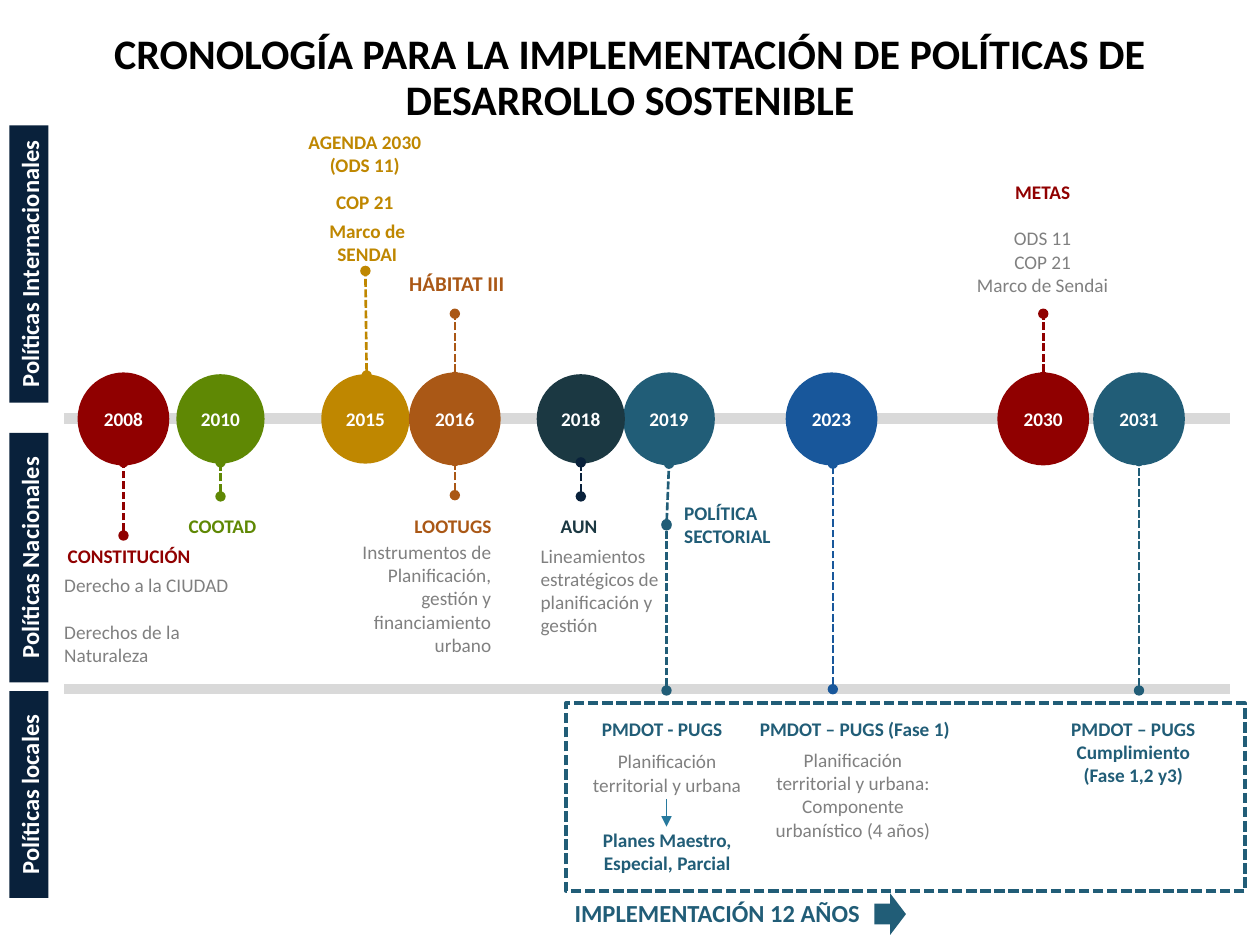
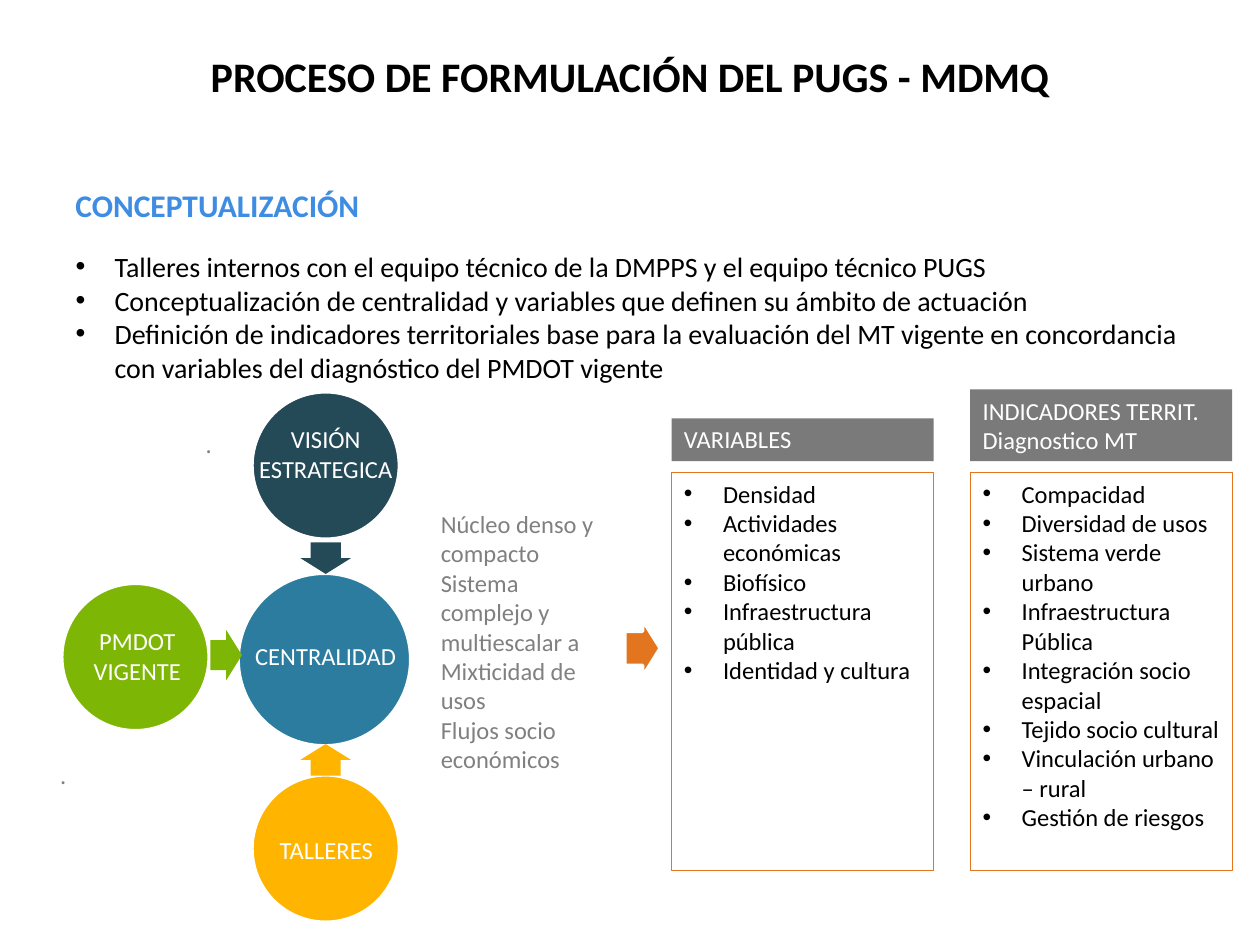
from lxml import etree
from pptx import Presentation
from pptx import util as u
from pptx.dml.color import RGBColor
from pptx.enum import dml, shapes, text
from pptx.oxml.ns import qn

C = {"gold": "BF8700", "brown": "AA5816", "teal": "215D77", "blue": "18579B",
     "red": "900000", "green": "5F8804", "slate": "1B3842", "navy": "09213B",
     "gray": "808080", "bar": "D9D9D9", "arrow": "287A9E", "white": "FFFFFF",
     "black": "000000", "sky": "3F8DE2", "hub": "2C7C9F", "vision": "244A58",
     "yellow": "FFB400", "lime": "7EB606", "orange": "E2751D"}
SHAPE = shapes.MSO_SHAPE
LEFT, CENTER, RIGHT = text.PP_ALIGN.LEFT, text.PP_ALIGN.CENTER, text.PP_ALIGN.RIGHT
TOP, MIDDLE = text.MSO_ANCHOR.TOP, text.MSO_ANCHOR.MIDDLE
DASH = dml.MSO_LINE.SQUARE_DOT

prs = Presentation()
prs.slide_width, prs.slide_height = u.Inches(10), u.Inches(7.5)
CELL = prs.slide_width / 10  # grid of 10 columns by 7.5 rows
TIGHT, WIDE = (0.07, 0.04), (0.1, 0.05)


def write(sp, paras, color, size, bold=False, align=LEFT, anchor=TOP,
          inset=WIDE, wrap=True, bullets=False, gap=0, spacing=None):
    """Fill a shape with paragraphs that share one format; gap is in points."""
    tf = sp.text_frame
    mx, my = (round(v * CELL) for v in inset)
    frame = {"auto_size": text.MSO_AUTO_SIZE.NONE, "word_wrap": wrap,
             "vertical_anchor": anchor, "margin_left": mx, "margin_right": mx,
             "margin_top": my, "margin_bottom": my}
    for name, value in frame.items():
        setattr(tf, name, value)
    for i, line in enumerate(paras):
        p = tf.add_paragraph() if i else tf.paragraphs[0]
        if bullets:
            pPr = p._p.get_or_add_pPr()
            indent = round(0.31 * CELL)
            pPr.set("marL", str(indent))
            pPr.set("indent", str(-indent))
            etree.SubElement(pPr, qn("a:buFont"), typeface="Arial")
            etree.SubElement(pPr, qn("a:buChar"), char="•")
        p.alignment, p.line_spacing = align, spacing
        p.space_before = u.Pt(gap if i else 0)
        r = p.add_run()
        r.text = line
        font = {"name": "Calibri", "size": u.Pt(size), "bold": bold}
        for name, value in font.items():
            setattr(r.font, name, value)
        r.font.color.rgb = RGBColor.from_string(C[color])


def put(s, kind, at, fill=None, line=None, width=2.0, rot=0):
    """Add a preset shape, or a text box if kind is None, at grid position."""
    at = [round(v * CELL) for v in at]
    if kind is None:
        return s.shapes.add_textbox(*at)
    sp = s.shapes.add_shape(kind, *at)
    sp.shadow.inherit = False
    sp.rotation = rot
    if fill:
        sp.fill.solid()
        sp.fill.fore_color.rgb = RGBColor.from_string(C[fill])
    else:
        sp.fill.background()
    if line:
        sp.line.color.rgb = RGBColor.from_string(C[line])
        sp.line.width = u.Pt(width)
    else:
        sp.line.fill.background()
    return sp


# Titles of both slides
slides = []
for layout, title in [
        (5, "CRONOLOGÍA PARA LA IMPLEMENTACIÓN DE POLÍTICAS DE DESARROLLO SOSTENIBLE"),
        (1, "PROCESO DE FORMULACIÓN DEL PUGS - MDMQ")]:
    s = prs.slides.add_slide(prs.slide_layouts[layout])
    sp = s.shapes.title
    sp.left, sp.top, sp.width, sp.height = [round(v * CELL) for v in (0.5, 0, 9, 1.25)]
    write(sp, [title], "black", 24, True, CENTER, MIDDLE, spacing=0.9)
    slides.append(s)

# Slide 1: timeline
s = slides[0]
frame = put(s, SHAPE.RECTANGLE, (4.49, 5.58, 5.39, 1.49), line="teal")
frame.line.dash_style = DASH

stems = [  # x1, y1, x2, y2, colour
    (2.91, 2.98, 2.9, 2.15, "gold"), (3.61, 2.99, 3.61, 2.49, "brown"),
    (3.61, 3.93, 3.61, 3.66, "brown"), (4.61, 3.94, 4.61, 3.67, "navy"),
    (5.29, 4.17, 5.31, 3.68, "teal"), (5.29, 5.48, 5.29, 4.16, "teal"),
    (9.04, 5.48, 9.04, 3.66, "teal"), (8.28, 2.99, 8.28, 2.49, "red"),
    (6.61, 5.47, 6.61, 3.68, "blue"), (0.98, 4.25, 0.98, 3.67, "red"),
    (1.75, 3.94, 1.75, 3.67, "green")]
years = [  # year, left, colour, outlined
    ("2015", 2.55, "gold", False), ("2016", 3.26, "brown", True),
    ("2019", 4.96, "teal", True), ("2023", 6.25, "blue", True),
    ("2030", 7.93, "red", True), ("2031", 8.69, "teal", True),
    ("2018", 4.26, "slate", False), ("2010", 1.4, "green", False),
    ("2008", 0.63, "red", True)]
lines = [((0.51, y, 9.76, y), "bar", 6, None, None, None) for y in (3.32, 5.47)]
lines += [(stem[:4], stem[4], 1.5, DASH, "oval", "oval") for stem in stems]
lines.append(((5.29, 6.34, 5.29, 6.56), "arrow", 0.75, None, None, "triangle"))
for i, (ends, color, width, dash, head, tail) in enumerate(lines):
    if i == 2:  # circles lie over the bars and under the stems
        for year, x, fill, outlined in years:
            sp = put(s, SHAPE.OVAL, (x, 2.97, 0.7, 0.71), fill,
                     fill if outlined else None)
            write(sp, [year], "white", 11, True, CENTER, MIDDLE, TIGHT)
    c = s.shapes.add_connector(shapes.MSO_CONNECTOR.STRAIGHT,
                               *[round(v * CELL) for v in ends])
    c.line.color.rgb = RGBColor.from_string(C[color])
    c.line.width = u.Pt(width)
    if dash:
        c.line.dash_style = dash
    spPr = c._element.spPr
    for tag, end in (("a:headEnd", head), ("a:tailEnd", tail)):
        if end:
            etree.SubElement(spPr.find(qn("a:ln")), qn(tag), type=end)
    etree.SubElement(spPr, qn("a:effectLst"))

for band, x, y, length in [("Políticas Internacionales", -0.87, 1.94, 2.2),
                           ("Políticas Nacionales", -0.76, 4.27, 1.98),
                           ("Políticas locales", -0.59, 6.15, 1.64)]:
    sp = put(s, SHAPE.RECTANGLE, (x, y, length, 0.31), "navy", rot=270)
    write(sp, [band], "white", 14, True, CENTER, inset=TIGHT)

headings = [
    ((2.25, 0.99, 1.29, 0.45), ["AGENDA 2030 (ODS 11)"], "gold"),
    ((2.25, 1.47, 1.29, 0.26), ["COP 21"], "gold"),
    ((2.27, 1.7, 1.29, 0.45), ["Marco de", "SENDAI"], "gold"),
    ((7.63, 1.39, 1.29, 0.26), ["METAS"], "red"),
    ((2.95, 4.04, 1.29, 0.26), ["LOOTUGS"], "brown"),
    ((3.95, 4.04, 1.29, 0.26), ["AUN"], "slate"),
    ((1.34, 4.04, 0.85, 0.26), ["COOTAD"], "green"),
    ((0.38, 4.28, 1.29, 0.26), ["CONSTITUCIÓN"], "red"),
    ((4.61, 5.65, 1.29, 0.26), ["PMDOT - PUGS"], "teal"),
    ((5.94, 5.65, 1.69, 0.26), ["PMDOT – PUGS (Fase 1)"], "teal"),
    ((8.35, 5.65, 1.29, 0.82), ["PMDOT – PUGS", "Cumplimiento", "(Fase 1,2 y3)"], "teal"),
    ((4.52, 6.53, 1.55, 0.47), ["Planes Maestro, Especial, Parcial"], "teal")]
for at, paras, color in headings:
    write(put(s, None, at), paras, color, 11, True, CENTER, inset=TIGHT)

for at, paras, size, color, align in [
        ((2.98, 2.11, 1.29, 0.28), ["HÁBITAT III"], 12, "brown", CENTER),
        ((5.36, 3.94, 0.91, 0.45), ["POLÍTICA", "SECTORIAL"], 11, "teal", LEFT),
        ((4.49, 7.09, 3.43, 0.31), ["IMPLEMENTACIÓN 12 AÑOS"], 14, "teal", LEFT)]:
    write(put(s, None, at), paras, color, size, True, align, inset=TIGHT)

details = [  # position, paragraphs, alignment, gap
    ((7.63, 1.76, 1.29, 0.63), ["ODS 11", "COP 21", "Marco de Sendai"], CENTER, 0),
    ((2.57, 4.25, 1.4, 1),
     ["Instrumentos de Planificación, gestión y financiamiento urbano"], RIGHT, 0),
    ((4.22, 4.28, 1.15, 0.82),
     ["Lineamientos estratégicos de planificación y gestión"], LEFT, 0),
    ((0.44, 4.51, 1.57, 0.82),
     ["Derecho a la CIUDAD", "Derechos de la Naturaleza"], LEFT, 13.4),
    ((4.58, 5.91, 1.43, 0.45), ["Planificación territorial y urbana"], CENTER, 0),
    ((6.02, 5.9, 1.5, 0.82), ["Planificación territorial y urbana:",
                              "Componente urbanístico (4 años)"], CENTER, 0)]
for at, paras, align, gap in details:
    write(put(s, None, at), paras, "gray", 11, align=align, inset=TIGHT, gap=gap)
put(s, SHAPE.RIGHT_ARROW, (6.94, 7.09, 0.25, 0.33), "teal")

# Slide 2: formulation process
s = slides[1]
body = s.placeholders[1]
body.left, body.top, body.width, body.height = [round(v * CELL) for v in (0.5, 1.93, 9, 1.18)]
write(body, [
    "Talleres internos con el equipo técnico de la DMPPS y el equipo técnico PUGS",
    "Conceptualización de centralidad y variables que definen su ámbito de actuación",
    "Definición de indicadores territoriales base para la evaluación del MT vigente en "
    "concordancia con variables del diagnóstico del PMDOT vigente"],
    "black", 16, bullets=True)
write(put(s, None, (0.5, 1.43, 9, 0.42)), ["CONCEPTUALIZACIÓN"], "sky", 18, True)

for x, y, d, fill, label_at, label in [
        (1.89, 4.55, 1.37, "hub", (1.92, 5.04, 1.33, 0.34), ["CENTRALIDAD"]),
        (2, 3.11, 1.17, "vision", (1.94, 3.32, 1.29, 0.57), ["VISIÓN", "ESTRATEGICA"]),
        (2, 6.15, 1.17, "yellow", (2.11, 6.58, 0.96, 0.34), ["TALLERES"]),
        (0.49, 4.63, 1.17, "lime", (0.64, 4.92, 0.9, 0.57), ["PMDOT", "VIGENTE"])]:
    put(s, SHAPE.OVAL, (x, y, d, d), fill, "white")
    write(put(s, None, label_at), label, "white", 14, align=CENTER, wrap=False)

for at, fill, line, rot in [
        ((1.67, 5, 0.25, 0.4), "lime", None, 0),
        ((2.46, 4.23, 0.25, 0.4), "vision", None, 90),
        ((2.46, 5.83, 0.25, 0.4), "yellow", None, 270),
        ((4.96, 4.92, 0.28, 0.45), "orange", "white", 0)]:
    sp = put(s, SHAPE.RIGHT_ARROW, at, fill, line, rot=rot)
    sp.adjustments[0], sp.adjustments[1] = 0.6, 0.5

for at, paras, align in [
        ((0.38, 3.36, 1.4, 0.34), ["."], RIGHT),
        ((0.38, 5.98, 1.4, 0.34), ["."], LEFT),
        ((3.4, 3.99, 1.56, 2.22),
         ["Núcleo denso y compacto Sistema complejo y multiescalar a Mixticidad de usos",
          "Flujos socio económicos"], LEFT)]:
    write(put(s, None, at), paras, "gray", 14, align=align)

for x, head_height, head, items in [
        (5.33, 0.34, ["VARIABLES"],
         ["Densidad", "Actividades económicas", "Biofísico",
          "Infraestructura pública", "Identidad y cultura"]),
        (7.7, 0.57, ["INDICADORES TERRIT.", "Diagnostico MT"],
         ["Compacidad", "Diversidad de usos", "Sistema verde urbano",
          "Infraestructura Pública", "Integración socio espacial",
          "Tejido socio cultural", "Vinculación urbano – rural",
          "Gestión de riesgos"])]:
    sp = put(s, SHAPE.RECTANGLE, (x, 3.66 - head_height, 2.08, head_height), "black")
    tint = sp._element.spPr.find(qn("a:solidFill"))[0]
    etree.SubElement(tint, qn("a:alpha"), val="52000")
    write(sp, head, "white", 14)
    sp = put(s, SHAPE.RECTANGLE, (x, 3.75, 2.08, 3.16), line="orange", width=0.75)
    write(sp, items, "black", 14, bullets=True)

prs.save("out.pptx")
